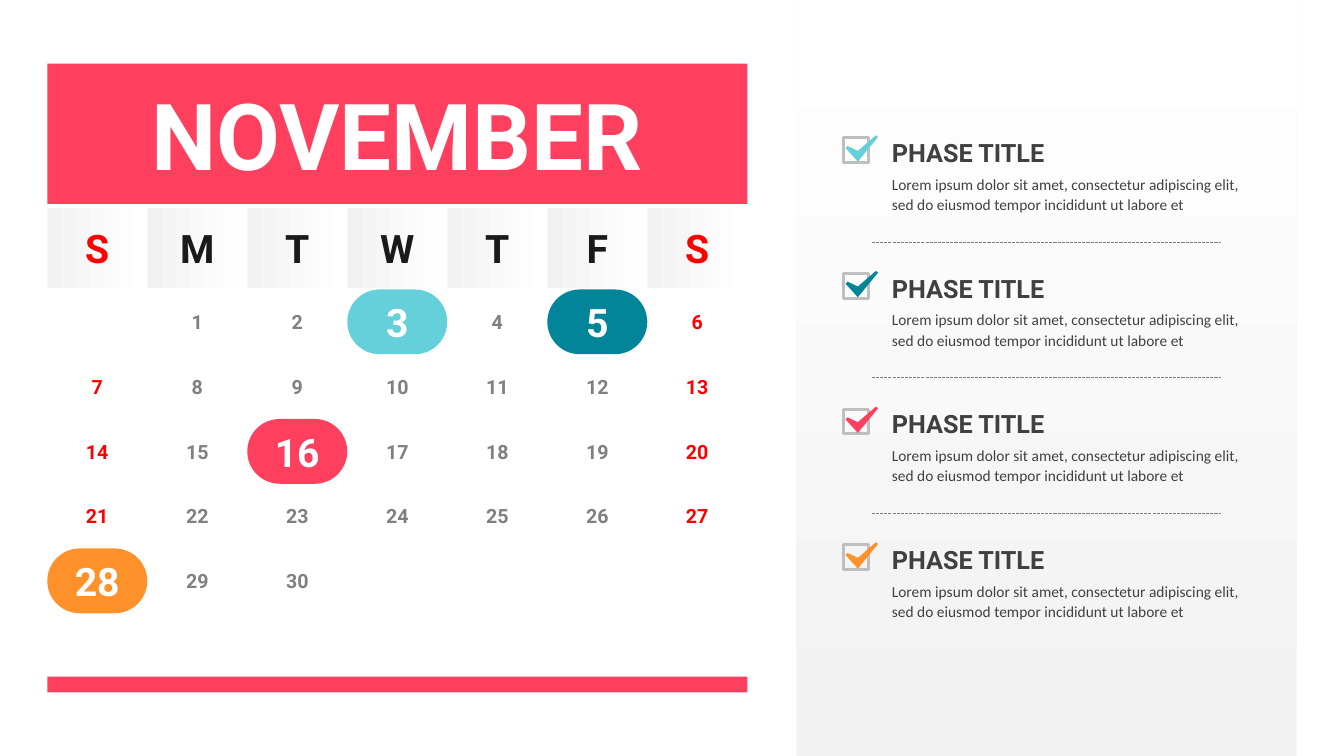
import pptx
import pptx.util
import pptx.dml.color
import pptx.enum.dml
import pptx.enum.shapes
import pptx.enum.text
from lxml import etree

Pt = pptx.util.Pt
SHAPES = pptx.enum.shapes.MSO_SHAPE
ALIGN = pptx.enum.text.PP_ALIGN
ANCHOR = pptx.enum.text.MSO_ANCHOR
PINK, RED, WHITE, GRAY = "FF3F5E", "FF0000", "FFFFFF", "808080"
AQUA, TEAL, ORANGE = "64D0DA", "028599", "FE912A"
MARKED_DAYS = {3: AQUA, 5: TEAL, 16: PINK, 28: ORANGE}
DETAIL = ("Lorem ipsum dolor sit amet, consectetur adipiscing elit, "
          "sed do eiusmod tempor incididunt ut labore et")


def color(hex_string):
    return pptx.dml.color.RGBColor.from_string(hex_string)


def write(paragraph, text, size=14, font="Roboto", ink=GRAY, bold=True,
          align=ALIGN.CENTER, spacing=None, before=None):
    paragraph.alignment = align
    paragraph.line_spacing = spacing
    if before is not None:
        paragraph.space_before = Pt(before)
    run = paragraph.add_run()
    run.text = text
    run.font.size, run.font.name, run.font.bold = Pt(size), font, bold
    run.font.color.rgb = color(ink)


def bare_frame(shape, anchor=ANCHOR.MIDDLE):
    frame = shape.text_frame
    frame.margin_left = frame.margin_top = frame.margin_right = frame.margin_bottom = 0
    frame.word_wrap = True
    frame.vertical_anchor = anchor
    return frame


def paint(shape, fill=None, angle=None, outline=None):
    """Solid fill, or a pale gray gradient when an angle is given."""
    shape.shadow.inherit = False
    if angle is not None:
        shape.fill.gradient()
        shape.fill.gradient_angle = angle
        for stop, tint in zip(shape.fill.gradient_stops, ("F2F2F2", WHITE)):
            stop.color.rgb = color(tint)
    elif fill:
        shape.fill.solid()
        shape.fill.fore_color.rgb = color(fill)
    else:
        shape.fill.background()
    if outline:
        shape.line.color.rgb = color(outline)
        shape.line.width = Pt(2)
    else:
        shape.line.fill.background()


def block(slide, left, top, width, height, kind=SHAPES.RECTANGLE, **look):
    shape = slide.shapes.add_shape(kind, Pt(left), Pt(top), Pt(width), Pt(height))
    paint(shape, **look)
    return shape


def text_box(slide, left, top, width, height):
    return slide.shapes.add_textbox(Pt(left), Pt(top), Pt(width), Pt(height))


def calendar(slide, left, top, width, height):
    column, row = width / 7, 46.25

    # Weekday headings
    for index, letter in enumerate("SMTWTFS"):
        weekday = block(slide, left + index * column, top + 103, column, 57.6, angle=0)
        write(bare_frame(weekday).paragraphs[0], letter, size=28,
              ink=RED if index in (0, 6) else "1A1A1A")

    # Month banner and closing bar
    month = block(slide, left, top, width, 100.2, fill=PINK)
    write(bare_frame(month).paragraphs[0], "NOVEMBER", size=66, ink=WHITE)
    block(slide, left, top + height - 11.2, width, 11.2, fill=PINK)

    # Days: the first falls on a Monday
    for number in range(1, 31):
        week, weekday = divmod(number, 7)
        cell = (left + weekday * column, top + 161.4 + week * row, column, row)
        if number in MARKED_DAYS:
            day = block(slide, *cell, kind=SHAPES.ROUNDED_RECTANGLE,
                        fill=MARKED_DAYS[number])
            day.adjustments[0] = 0.5
            size, ink = 28, WHITE
        else:
            day = text_box(slide, *cell)
            size, ink = 14, RED if weekday in (0, 6) else GRAY
        write(bare_frame(day).paragraphs[0], str(number), size=size, ink=ink)


def phase(slide, left, top, width, height, accent):
    # Checkbox with its tick
    block(slide, left, top + 2.6, 17.6, 17.6, outline="BFBFBF")
    start, *rest = [(Pt(left + x), Pt(top + y)) for x, y in (
        (23.1, 0.7), (24.6, 2), (10.2, 19.5), (1.4, 9.9), (2.9, 8.4), (10.2, 11.9))]
    outline = slide.shapes.build_freeform(*start, scale=1.0)
    outline.add_line_segments(rest, close=True)
    paint(outline.convert_to_shape(), fill=accent)

    # Title and detail
    caption = text_box(slide, left + 34.5, top, width - 34.5, height)
    frame = bare_frame(caption, ANCHOR.TOP)
    frame.auto_size = pptx.enum.text.MSO_AUTO_SIZE.SHAPE_TO_FIT_TEXT
    layout = dict(ink="404040", align=ALIGN.LEFT, spacing=1.1, before=4)
    write(frame.paragraphs[0], "PHASE TITLE", size=18, **layout)
    write(frame.add_paragraph(), DETAIL, size=11, font="Calibri", bold=False, **layout)


def divider(slide, left, top, width):
    rule = slide.shapes.add_connector(pptx.enum.shapes.MSO_CONNECTOR.STRAIGHT,
                                      Pt(left), Pt(top), Pt(left + width), Pt(top))
    rule.line.color.rgb = color(GRAY)
    rule.line.width = Pt(0.75)
    rule.line.dash_style = pptx.enum.dml.MSO_LINE.SQUARE_DOT
    etree.SubElement(rule._element.spPr, pptx.oxml.ns.qn("a:effectLst"))


def phase_panel(slide, left, top, width, height):
    block(slide, left, top, width, height, angle=90)
    pitch = 96.9
    for index, accent in enumerate(MARKED_DAYS.values()):
        phase_top = top + 95.9 + index * pitch
        if index:
            divider(slide, left + 54, phase_top - 19.8, 249.2)
        phase(slide, left + 33.8, phase_top, 289.4, 57.6, accent)


def main():
    deck = pptx.Presentation()
    deck.slide_width, deck.slide_height = Pt(960), Pt(540)
    slide = deck.slides.add_slide(deck.slide_layouts[6])
    calendar(slide, 33.8, 45.4, 500, 449.2)
    phase_panel(slide, 568.8, 0, 357.4, 540)
    deck.save("out.pptx")


if __name__ == "__main__":
    main()
